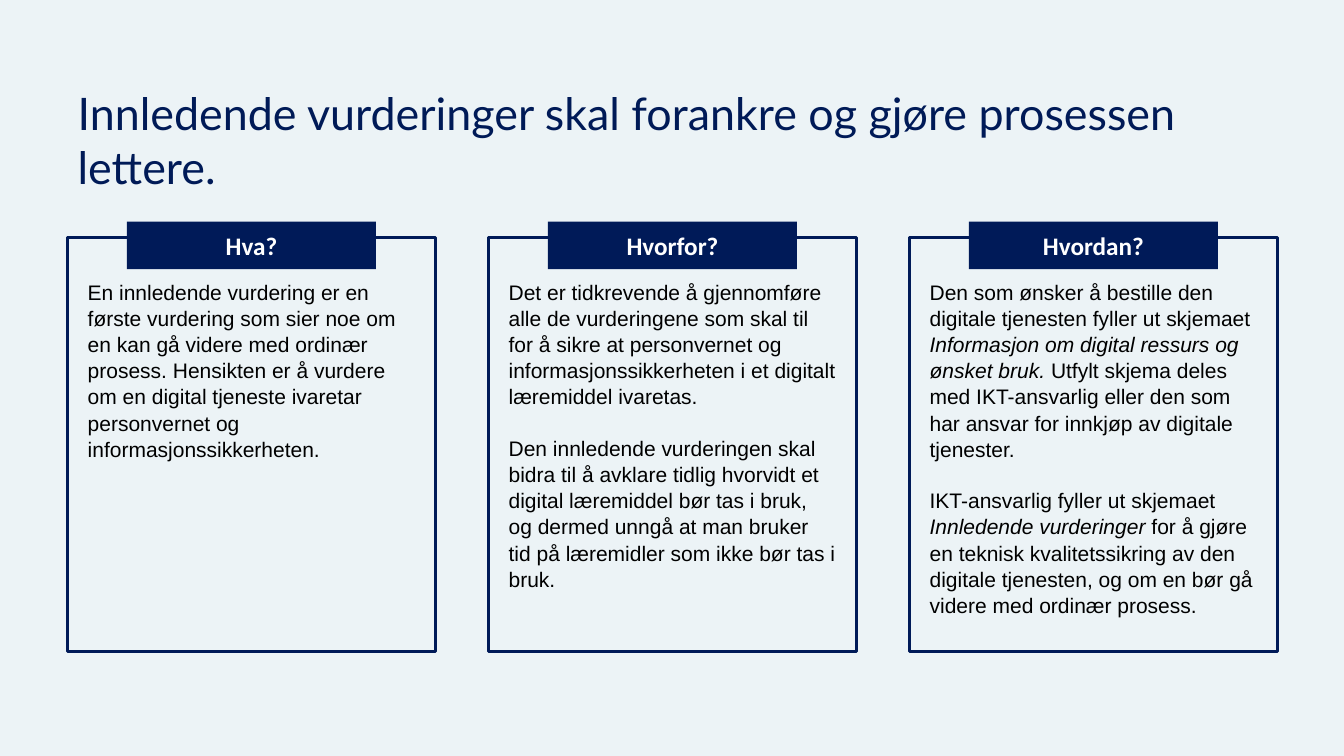
from dataclasses import dataclass

from pptx import Presentation
from pptx.dml.color import RGBColor as RGB
from pptx.enum.shapes import MSO_SHAPE as SHAPE
from pptx.enum.text import MSO_ANCHOR as ANCHOR, PP_ALIGN as ALIGN
from pptx.util import Inches, Pt


@dataclass(frozen=True)
class Theme:
    paper: RGB = RGB(0xEC, 0xF3, 0xF6)
    navy: RGB = RGB(0x00, 0x1A, 0x58)
    title: RGB = RGB(0x00, 0x1A, 0x57)
    ink: RGB = RGB(0x00, 0x00, 0x00)
    white: RGB = RGB(0xFF, 0xFF, 0xFF)
    title_font: str = "Lato"
    label_font: str = "Calibri"
    body_font: str = "Arial"
    title_size: int = 32
    label_size: int = 18
    body_size: int = 15
    border: float = 2.25
    body_spacing: float = 1.04
    paragraph_gap: int = 18


class SlideBuilder:
    def __init__(self, prs, theme):
        self.theme = theme
        self.slide = prs.slides.add_slide(prs.slide_layouts[5])
        fill = self.slide.background.fill
        fill.solid()
        fill.fore_color.rgb = theme.paper

    def run(self, p, text, font, size, color, bold=False, italic=False):
        r = p.add_run()
        r.text = text
        r.font.name, r.font.size = font, Pt(size)
        r.font.bold, r.font.italic = bold, italic
        r.font.color.rgb = color

    def title(self, text, x, y, w, h):
        t = self.theme
        sp = self.slide.shapes.title
        sp.left, sp.top, sp.width, sp.height = map(Inches, (x, y, w, h))
        tf = sp.text_frame
        tf.word_wrap = True
        tf.vertical_anchor = ANCHOR.TOP
        p = tf.paragraphs[0]
        p.alignment = ALIGN.LEFT
        self.run(p, text, t.title_font, t.title_size, t.title)

    def box(self, x, y, w, h, fill, line=None):
        sp = self.slide.shapes.add_shape(SHAPE.RECTANGLE, *map(Inches, (x, y, w, h)))
        sp.shadow.inherit = False
        sp.fill.solid()
        sp.fill.fore_color.rgb = fill
        if line is None:
            sp.line.fill.background()
        else:
            sp.line.color.rgb = line
            sp.line.width = Pt(self.theme.border)
        sp.text_frame.word_wrap = True
        return sp

    def card(self, paragraphs, x, y, w, h):
        t = self.theme
        tf = self.box(x, y, w, h, t.paper, t.navy).text_frame
        tf.vertical_anchor = ANCHOR.TOP
        tf.margin_left = tf.margin_right = tf.margin_bottom = Inches(0.2)
        tf.margin_top = Inches(0.4)
        for i, runs in enumerate(paragraphs):
            p = tf.add_paragraph() if i else tf.paragraphs[0]
            p.alignment = ALIGN.LEFT
            p.line_spacing = t.body_spacing
            if i:
                p.space_before = Pt(t.paragraph_gap)
            for text, italic in runs:
                self.run(p, text, t.body_font, t.body_size, t.ink, italic=italic)

    def label(self, text, x, y, w, h):
        t = self.theme
        tf = self.box(x, y, w, h, t.navy).text_frame
        tf.vertical_anchor = ANCHOR.MIDDLE
        p = tf.paragraphs[0]
        p.alignment = ALIGN.CENTER
        self.run(p, text, t.label_font, t.label_size, t.white, bold=True)


# Each column: label, then paragraphs of (text, italic) runs
COLUMNS = [
    ("Hva?", [
        [("En innledende vurdering er en første vurdering som sier noe om en kan gå "
          "videre med ordinær prosess. Hensikten er å vurdere om en digital tjeneste "
          "ivaretar personvernet og informasjonssikkerheten.", False)],
    ]),
    ("Hvorfor?", [
        [("Det er tidkrevende å gjennomføre alle de vurderingene som skal til for å "
          "sikre at personvernet og informasjonssikkerheten i et digitalt læremiddel "
          "ivaretas.", False)],
        [("Den innledende vurderingen skal bidra til å avklare tidlig hvorvidt et "
          "digital læremiddel bør tas i bruk, og dermed unngå at man bruker tid på "
          "læremidler som ikke bør tas i bruk.", False)],
    ]),
    ("Hvordan?", [
        [("Den som ønsker å bestille den digitale tjenesten fyller ut skjemaet ", False),
         ("Informasjon om digital ressurs og ønsket bruk. ", True),
         ("Utfylt skjema deles med IKT-ansvarlig eller den som har ansvar for "
          "innkjøp av digitale tjenester.", False)],
        [("IKT-ansvarlig fyller ut skjemaet ", False),
         ("Innledende vurderinger", True),
         (" for å gjøre en teknisk kvalitetssikring av den digitale tjenesten, og om "
          "en bør gå videre med ordinær prosess.", False)],
    ]),
]


def main():
    prs = Presentation()
    prs.slide_width, prs.slide_height = Inches(13.33), Inches(7.5)
    builder = SlideBuilder(prs, Theme())

    # Title
    left, width = 0.67, 12
    builder.title("Innledende vurderinger skal forankre og gjøre prosessen lettere.",
                  left, 0.8, width, 1.25)

    # Three equal cards, each with a centred label over its top edge
    card_w, label_w = 3.65, 2.47
    step = (width - card_w) / (len(COLUMNS) - 1)
    for i, (heading, paragraphs) in enumerate(COLUMNS):
        x = left + i * step
        builder.card(paragraphs, x, 2.36, card_w, 4.1)
        builder.label(heading, x + (card_w - label_w) / 2, 2.2, label_w, 0.47)

    prs.save("out.pptx")


if __name__ == "__main__":
    main()
